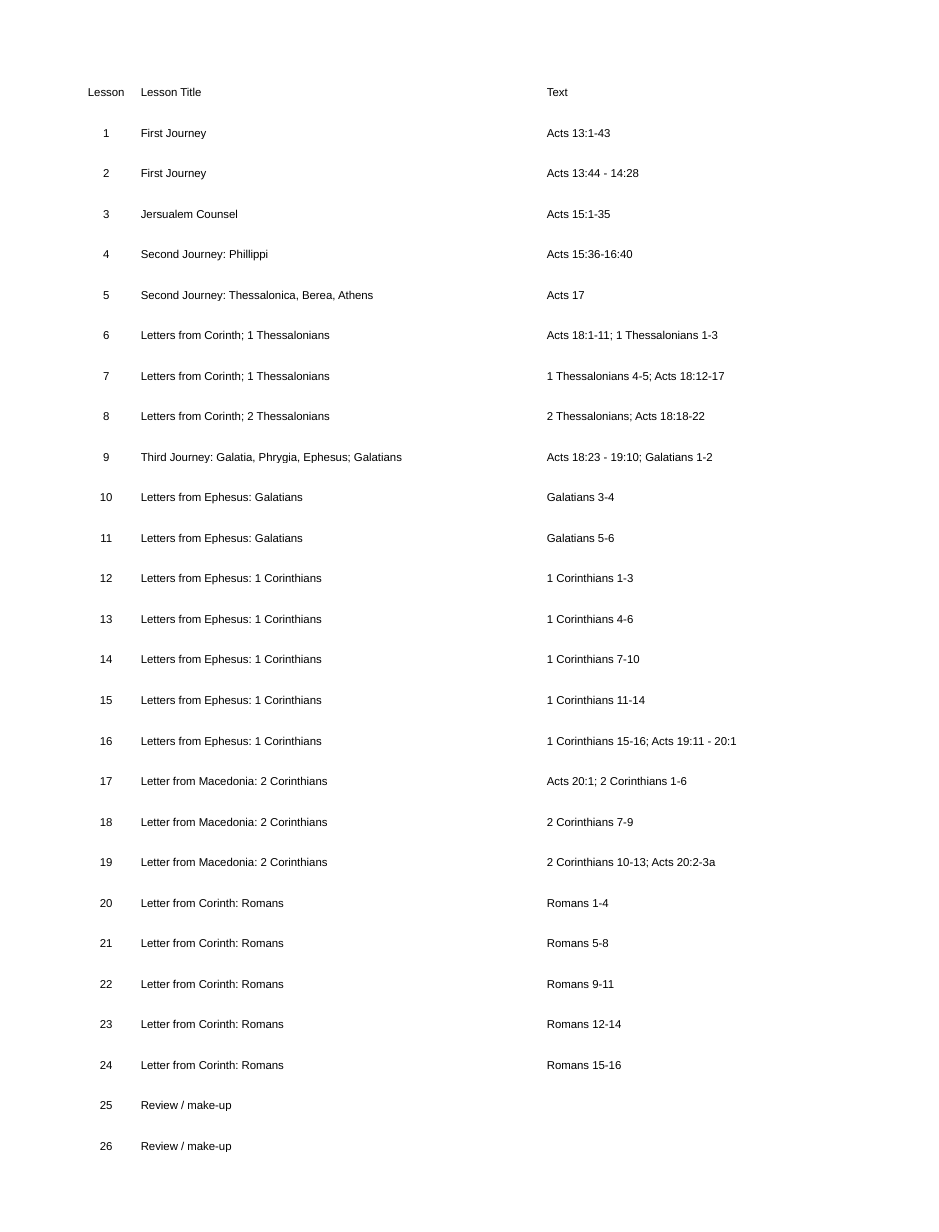
import pptx
import pptx.dml.color
import pptx.enum.text
import pptx.util

Inches = pptx.util.Inches
ALIGN = pptx.enum.text.PP_ALIGN

COLORS = {"text": "000000"}
HEADER = ("Lesson", "Lesson Title", "Text")
LESSONS = [
    ("First Journey", "Acts 13:1-43"),
    ("First Journey", "Acts 13:44 - 14:28"),
    ("Jersualem Counsel", "Acts 15:1-35"),
    ("Second Journey: Phillippi", "Acts 15:36-16:40"),
    ("Second Journey: Thessalonica, Berea, Athens", "Acts 17"),
    ("Letters from Corinth; 1 Thessalonians", "Acts 18:1-11; 1 Thessalonians 1-3"),
    ("Letters from Corinth; 1 Thessalonians", "1 Thessalonians 4-5; Acts 18:12-17"),
    ("Letters from Corinth; 2 Thessalonians", "2 Thessalonians; Acts 18:18-22"),
    ("Third Journey: Galatia, Phrygia, Ephesus; Galatians",
     "Acts 18:23 - 19:10; Galatians 1-2"),
    ("Letters from Ephesus: Galatians", "Galatians 3-4"),
    ("Letters from Ephesus: Galatians", "Galatians 5-6"),
    ("Letters from Ephesus: 1 Corinthians", "1 Corinthians 1-3"),
    ("Letters from Ephesus: 1 Corinthians", "1 Corinthians 4-6"),
    ("Letters from Ephesus: 1 Corinthians", "1 Corinthians 7-10"),
    ("Letters from Ephesus: 1 Corinthians", "1 Corinthians 11-14"),
    ("Letters from Ephesus: 1 Corinthians", "1 Corinthians 15-16; Acts 19:11 - 20:1"),
    ("Letter from Macedonia: 2 Corinthians", "Acts 20:1; 2 Corinthians 1-6"),
    ("Letter from Macedonia: 2 Corinthians", "2 Corinthians 7-9"),
    ("Letter from Macedonia: 2 Corinthians", "2 Corinthians 10-13; Acts 20:2-3a"),
    ("Letter from Corinth: Romans", "Romans 1-4"),
    ("Letter from Corinth: Romans", "Romans 5-8"),
    ("Letter from Corinth: Romans", "Romans 9-11"),
    ("Letter from Corinth: Romans", "Romans 12-14"),
    ("Letter from Corinth: Romans", "Romans 15-16"),
    ("Review / make-up", ""),
    ("Review / make-up", ""),
]
COLUMN_WIDTHS = (0.57, 3.46, 2.63)
LEFT, TOP, HEIGHT = 0.62, 0.5, 9.33


def fill_cell(cell, text, align):
    cell.fill.background()
    cell.vertical_anchor = pptx.enum.text.MSO_ANCHOR.BOTTOM
    cell.margin_left = cell.margin_right = cell.margin_top = Inches(0.01)
    cell.margin_bottom = 0
    p = cell.text_frame.paragraphs[0]
    p.text = text
    p.alignment = align
    p.font.name = "Arial"
    p.font.size = pptx.util.Pt(7)
    p.font.color.rgb = pptx.dml.color.RGBColor.from_string(COLORS["text"])


def add_schedule(s):
    rows = [HEADER] + [(str(n), *lesson) for n, lesson in enumerate(LESSONS, 1)]
    table = s.shapes.add_table(
        len(rows), len(HEADER), Inches(LEFT), Inches(TOP),
        Inches(sum(COLUMN_WIDTHS)), Inches(HEIGHT)).table
    table.first_row = table.horz_banding = False
    for column, width in zip(table.columns, COLUMN_WIDTHS):
        column.width = Inches(width)
    for r, row in enumerate(rows):
        for c, text in enumerate(row):
            fill_cell(table.cell(r, c), text, ALIGN.LEFT if c else ALIGN.CENTER)


def main():
    prs = pptx.Presentation()
    prs.slide_width, prs.slide_height = Inches(8), Inches(10.5)
    add_schedule(prs.slides.add_slide(prs.slide_layouts[6]))
    prs.save("out.pptx")


if __name__ == "__main__":
    main()
